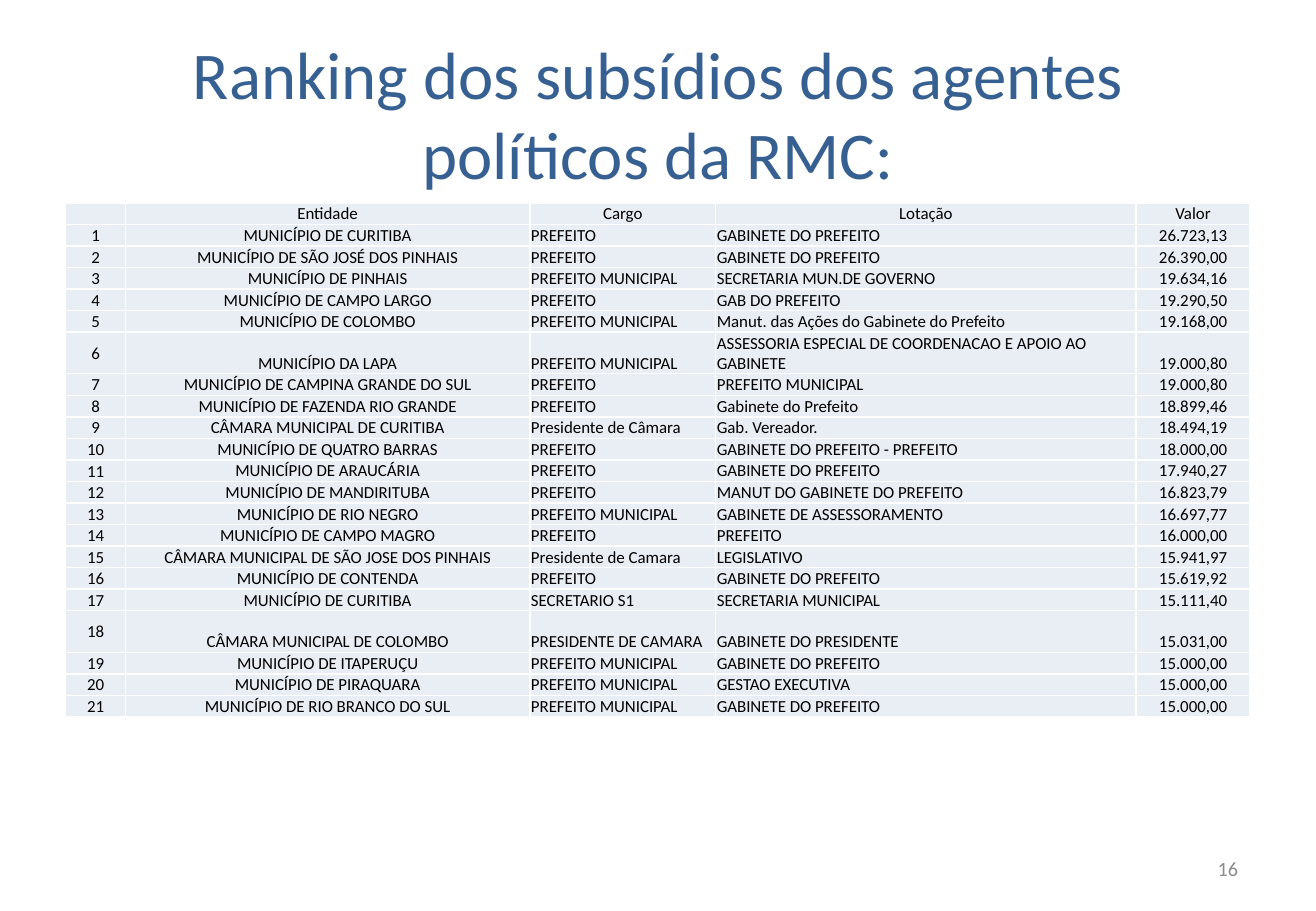
from lxml.etree import SubElement as Sub
from pptx import Presentation
from pptx.dml.color import RGBColor as RGB
from pptx.enum.text import MSO_ANCHOR as Anchor, PP_ALIGN as Align
from pptx.oxml.ns import qn
from pptx.util import Inches, Pt

WIDE, HIGH = 10.83, 7.5
FONT = "Calibri"
HUES = {"title": "376092", "text": "000000", "page": "8C8C8C",
        "cell": "E9EDF4", "edge": "FFFFFF"}
COLS = [0.49, 3.33, 1.53, 3.46, 0.94]
TALL = {6: 1.95, 18: 1.95}
HEAD = ["", "Entidade", "Cargo", "Lotação", "Valor"]
ROWS = [
    ("MUNICÍPIO DE CURITIBA", "PREFEITO", "GABINETE DO PREFEITO", "26.723,13"),
    ("MUNICÍPIO DE SÃO JOSÉ DOS PINHAIS", "PREFEITO", "GABINETE DO PREFEITO", "26.390,00"),
    ("MUNICÍPIO DE PINHAIS", "PREFEITO MUNICIPAL", "SECRETARIA MUN.DE GOVERNO", "19.634,16"),
    ("MUNICÍPIO DE CAMPO LARGO", "PREFEITO", "GAB DO PREFEITO", "19.290,50"),
    ("MUNICÍPIO DE COLOMBO", "PREFEITO MUNICIPAL",
     "Manut. das Ações do Gabinete do Prefeito", "19.168,00"),
    ("MUNICÍPIO DA LAPA", "PREFEITO MUNICIPAL",
     "ASSESSORIA ESPECIAL DE COORDENACAO E APOIO AO GABINETE", "19.000,80"),
    ("MUNICÍPIO DE CAMPINA GRANDE DO SUL", "PREFEITO", "PREFEITO MUNICIPAL", "19.000,80"),
    ("MUNICÍPIO DE FAZENDA RIO GRANDE", "PREFEITO", "Gabinete do Prefeito", "18.899,46"),
    ("CÂMARA MUNICIPAL DE CURITIBA", "Presidente de Câmara", "Gab. Vereador.", "18.494,19"),
    ("MUNICÍPIO DE QUATRO BARRAS", "PREFEITO", "GABINETE DO PREFEITO - PREFEITO", "18.000,00"),
    ("MUNICÍPIO DE ARAUCÁRIA", "PREFEITO", "GABINETE DO PREFEITO", "17.940,27"),
    ("MUNICÍPIO DE MANDIRITUBA", "PREFEITO", "MANUT DO GABINETE DO PREFEITO", "16.823,79"),
    ("MUNICÍPIO DE RIO NEGRO", "PREFEITO MUNICIPAL", "GABINETE DE ASSESSORAMENTO", "16.697,77"),
    ("MUNICÍPIO DE CAMPO MAGRO", "PREFEITO", "PREFEITO", "16.000,00"),
    ("CÂMARA MUNICIPAL DE SÃO JOSE DOS PINHAIS", "Presidente de Camara",
     "LEGISLATIVO", "15.941,97"),
    ("MUNICÍPIO DE CONTENDA", "PREFEITO", "GABINETE DO PREFEITO", "15.619,92"),
    ("MUNICÍPIO DE CURITIBA", "SECRETARIO S1", "SECRETARIA MUNICIPAL", "15.111,40"),
    ("CÂMARA MUNICIPAL DE COLOMBO", "PRESIDENTE DE CAMARA",
     "GABINETE DO PRESIDENTE", "15.031,00"),
    ("MUNICÍPIO DE ITAPERUÇU", "PREFEITO MUNICIPAL", "GABINETE DO PREFEITO", "15.000,00"),
    ("MUNICÍPIO DE PIRAQUARA", "PREFEITO MUNICIPAL", "GESTAO EXECUTIVA", "15.000,00"),
    ("MUNICÍPIO DE RIO BRANCO DO SUL", "PREFEITO MUNICIPAL",
     "GABINETE DO PREFEITO", "15.000,00"),
]


def style(para, size, hue, align):
    """Set the font and alignment of a paragraph."""
    para.alignment = align
    para.font.name, para.font.size = FONT, Pt(size)
    para.font.color.rgb = RGB.from_string(HUES[hue])


def add_label(slide, box, text, size, hue, align):
    """Place wrapped text, centred in height, in the box."""
    frame = slide.shapes.add_textbox(*map(Inches, box)).text_frame
    frame.word_wrap = True
    frame.vertical_anchor = Anchor.MIDDLE
    para = frame.paragraphs[0]
    para.text = text
    style(para, size, hue, align)


def paint(cell):
    """Fill a cell and draw its four edges."""
    props = cell._tc.get_or_add_tcPr()
    for side in ("lnL", "lnR", "lnT", "lnB"):
        line = Sub(props, qn(f"a:{side}"), w=str(Pt(1)))
        Sub(Sub(line, qn("a:solidFill")), qn("a:srgbClr"), val=HUES["edge"])
    cell.fill.solid()
    cell.fill.fore_color.rgb = RGB.from_string(HUES["cell"])


def add_ranking(slide, box):
    """Fill the box with the ranking table."""
    data = [HEAD] + [(str(n), *row) for n, row in enumerate(ROWS, 1)]
    table = slide.shapes.add_table(len(data), len(COLS), *map(Inches, box)).table
    table.first_row = table.horz_banding = False
    for col, share in zip(table.columns, COLS):
        col.width = Inches(box[2] * share / sum(COLS))
    parts = [TALL.get(r, 1) for r in range(len(data))]
    for r, row in enumerate(data):
        table.rows[r].height = Inches(box[3] * parts[r] / sum(parts))
        for c, text in enumerate(row):
            cell = table.cell(r, c)
            cell.margin_left = cell.margin_right = cell.margin_top = Inches(0.01)
            cell.margin_bottom = 0
            cell.vertical_anchor = Anchor.MIDDLE if c == 0 else Anchor.BOTTOM
            para = cell.text_frame.paragraphs[0]
            para.text = text
            left = r > 0 and c in (2, 3)
            style(para, 10, "text", Align.LEFT if left else Align.CENTER)
            paint(cell)


def main():
    """Build the slide and save it."""
    deck = Presentation()
    deck.slide_width, deck.slide_height = Inches(WIDE), Inches(HIGH)
    slide = deck.slides.add_slide(deck.slide_layouts[6])
    edge, span = WIDE * 0.05, WIDE * 0.9
    add_label(slide, (edge, HIGH * 0.04, span, HIGH / 6),
              "Ranking dos subsídios dos agentes políticos da RMC:",
              39.6, "title", Align.CENTER)
    add_ranking(slide, (edge, 1.67, span, 4.22))
    foot = 2.53
    add_label(slide, (edge + span - foot, 6.95, foot, 0.4),
              "16", 12, "page", Align.RIGHT)
    deck.save("out.pptx")


if __name__ == "__main__":
    main()
